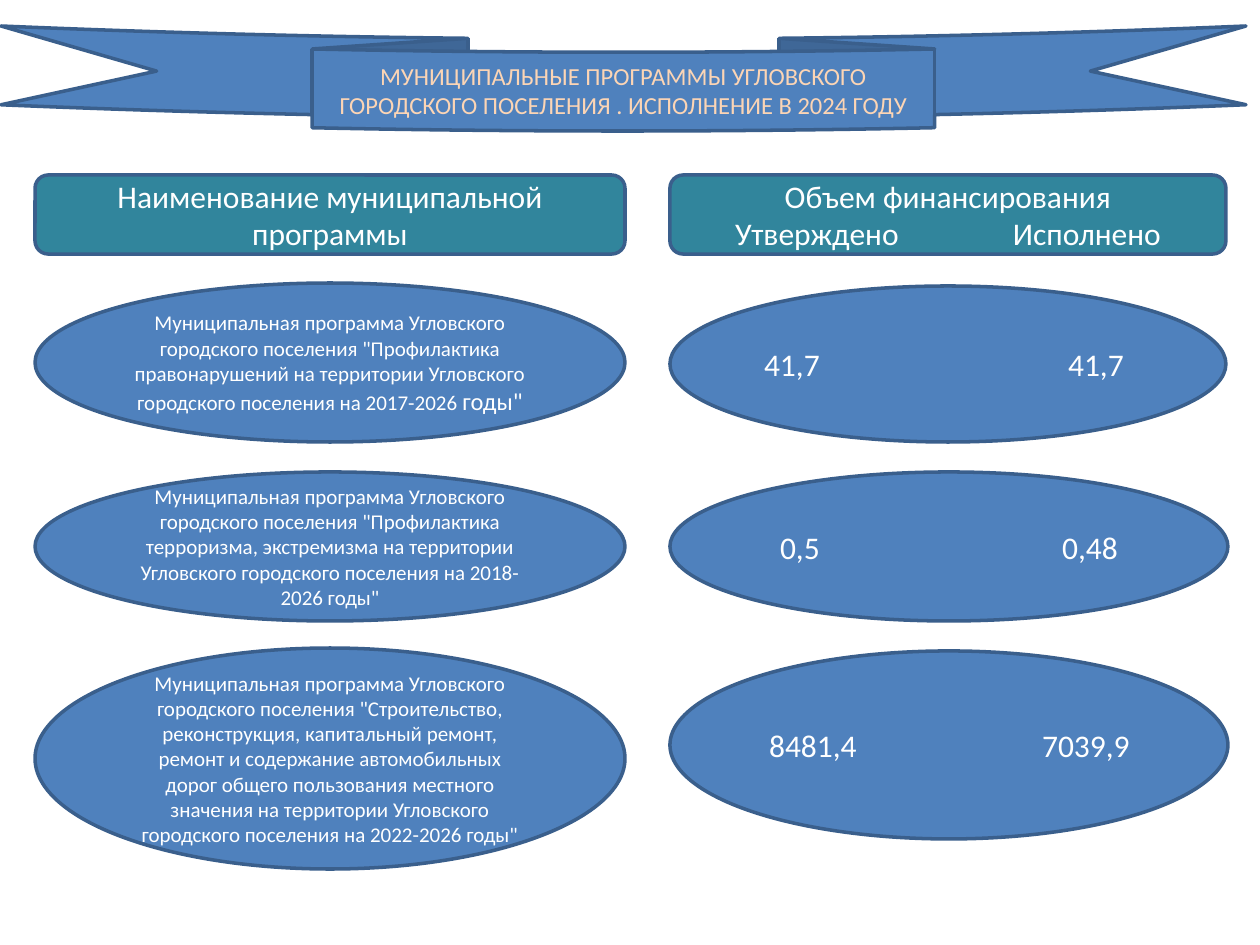
"""Build the slide on municipal programmes and their financing in 2024."""
from lxml.etree import SubElement
from pptx import Presentation
from pptx.dml.color import RGBColor
from pptx.enum.shapes import MSO_SHAPE
from pptx.enum.text import MSO_ANCHOR, PP_ALIGN
from pptx.oxml.ns import qn
from pptx.util import Pt

PX = 914400 // 126
BLUE, TEAL, OUTLINE = "4F81BD", "31859C", "3A5F8C"
WHITE, PEACH = "FFFFFF", "FCD5B5"
ELLIPSE_INSET, ROUNDED_INSET = 0.1464, 0.0488
NAME_LEFT, NAME_WIDTH = 35, 590
AMOUNT_LEFT = 670
HEADER_TOP, HEADER_HEIGHT, HEADER_WIDTH = 175, 79, 556

TITLE = "МУНИЦИПАЛЬНЫЕ ПРОГРАММЫ УГЛОВСКОГО ГОРОДСКОГО ПОСЕЛЕНИЯ . ИСПОЛНЕНИЕ В 2024 ГОДУ"
NAME_HEADER = "Наименование муниципальной программы"
AMOUNT_HEADER = "Объем финансирования"
AMOUNT_COLUMNS = ("Утверждено", "Исполнено")
COLUMN_CENTRES = (817, 1087)
PREFIX = 'Муниципальная программа Угловского городского поселения "'
PROGRAMMES = [
    {
        "name": [("Профилактика правонарушений на территории Угловского "
                  "городского поселения на 2017-2026 ", 12), ('годы"', 14)],
        "name_box": (283, 159),
        "amounts": ("41,7", "41,7"),
        "centres": (792, 1096),
        "amount_box": (286, 556, 156),
    },
    {
        "name": [("Профилактика терроризма, экстремизма на территории "
                  'Угловского городского поселения на 2018-2026 годы"', 12)],
        "name_box": (472, 149),
        "amounts": ("0,5", "0,48"),
        "centres": (800, 1090),
        "amount_box": (472, 558, 149),
    },
    {
        "name": [("Строительство, реконструкция, капитальный ремонт, ремонт и "
                  "содержание автомобильных дорог общего пользования местного "
                  "значения на территории Угловского городского поселения на "
                  '2022-2026 годы"', 12)],
        "name_box": (648, 221),
        "amounts": ("8481,4", "7039,9"),
        "centres": (813, 1086),
        "amount_box": (651, 558, 188),
    },
]


def rgb(value):
    """Turn a hex string into a colour."""
    return RGBColor.from_string(value)


def add_box(slide, kind, box, fill=BLUE):
    """Add an outlined shape and return it."""
    shape = slide.shapes.add_shape(kind, *(value * PX for value in box))
    shape.shadow.inherit = False
    shape.fill.solid()
    shape.fill.fore_color.rgb = rgb(fill)
    shape.line.color.rgb = rgb(OUTLINE)
    shape.line.width = Pt(2)
    shape.text_frame.word_wrap = True
    shape.text_frame.vertical_anchor = MSO_ANCHOR.MIDDLE
    return shape


def write_runs(paragraph, runs, color=WHITE):
    """Write centred (text, size) runs into a paragraph."""
    paragraph.alignment = PP_ALIGN.CENTER
    for text, size in runs:
        run = paragraph.add_run()
        run.text = text
        run.font.name = "Calibri"
        run.font.size = Pt(size)
        run.font.color.rgb = rgb(color)


def write_pair(paragraph, pair, centres, text_left):
    """Write two values on centred tab stops."""
    write_runs(paragraph, [("".join(f"\t{value}" for value in pair), 18)])
    paragraph.alignment = PP_ALIGN.LEFT
    tabs = SubElement(paragraph._p.get_or_add_pPr(), qn("a:tabLst"))
    for centre in centres:
        position = round((centre - text_left) * PX)
        SubElement(tabs, qn("a:tab"), pos=str(position), algn="ctr")


def remove_side_margins(frame):
    """Let the text start at the edge of its area."""
    frame.margin_left = frame.margin_right = 0


def add_headers(slide):
    """Add the two column headers."""
    kind = MSO_SHAPE.ROUNDED_RECTANGLE
    name_box = (NAME_LEFT, HEADER_TOP, NAME_WIDTH, HEADER_HEIGHT)
    name = add_box(slide, kind, name_box, TEAL)
    write_runs(name.text_frame.paragraphs[0], [(NAME_HEADER, 18)])
    amount_box = (AMOUNT_LEFT, HEADER_TOP, HEADER_WIDTH, HEADER_HEIGHT)
    frame = add_box(slide, kind, amount_box, TEAL).text_frame
    remove_side_margins(frame)
    write_runs(frame.paragraphs[0], [(AMOUNT_HEADER, 18)])
    text_left = AMOUNT_LEFT + HEADER_HEIGHT * ROUNDED_INSET
    write_pair(frame.add_paragraph(), AMOUNT_COLUMNS, COLUMN_CENTRES, text_left)


def add_programme(slide, programme):
    """Add the name and amount ellipses of one programme."""
    top, height = programme["name_box"]
    name = add_box(slide, MSO_SHAPE.OVAL, (NAME_LEFT, top, NAME_WIDTH, height))
    (start, size), *rest = programme["name"]
    write_runs(name.text_frame.paragraphs[0], [(PREFIX + start, size), *rest])
    top, width, height = programme["amount_box"]
    frame = add_box(slide, MSO_SHAPE.OVAL, (AMOUNT_LEFT, top, width, height)).text_frame
    remove_side_margins(frame)
    text_left = AMOUNT_LEFT + width * ELLIPSE_INSET
    write_pair(frame.paragraphs[0], programme["amounts"], programme["centres"], text_left)


def main():
    """Build and save the presentation."""
    presentation = Presentation()
    presentation.slide_width, presentation.slide_height = 1260 * PX, 945 * PX
    slide = presentation.slides.add_slide(presentation.slide_layouts[6])
    ribbon = add_box(slide, MSO_SHAPE.CURVED_DOWN_RIBBON, (1, 26, 1245, 105))
    write_runs(ribbon.text_frame.paragraphs[0], [(TITLE, 14)], PEACH)
    add_headers(slide)
    for programme in PROGRAMMES:
        add_programme(slide, programme)
    presentation.save("out.pptx")


if __name__ == "__main__":
    main()
